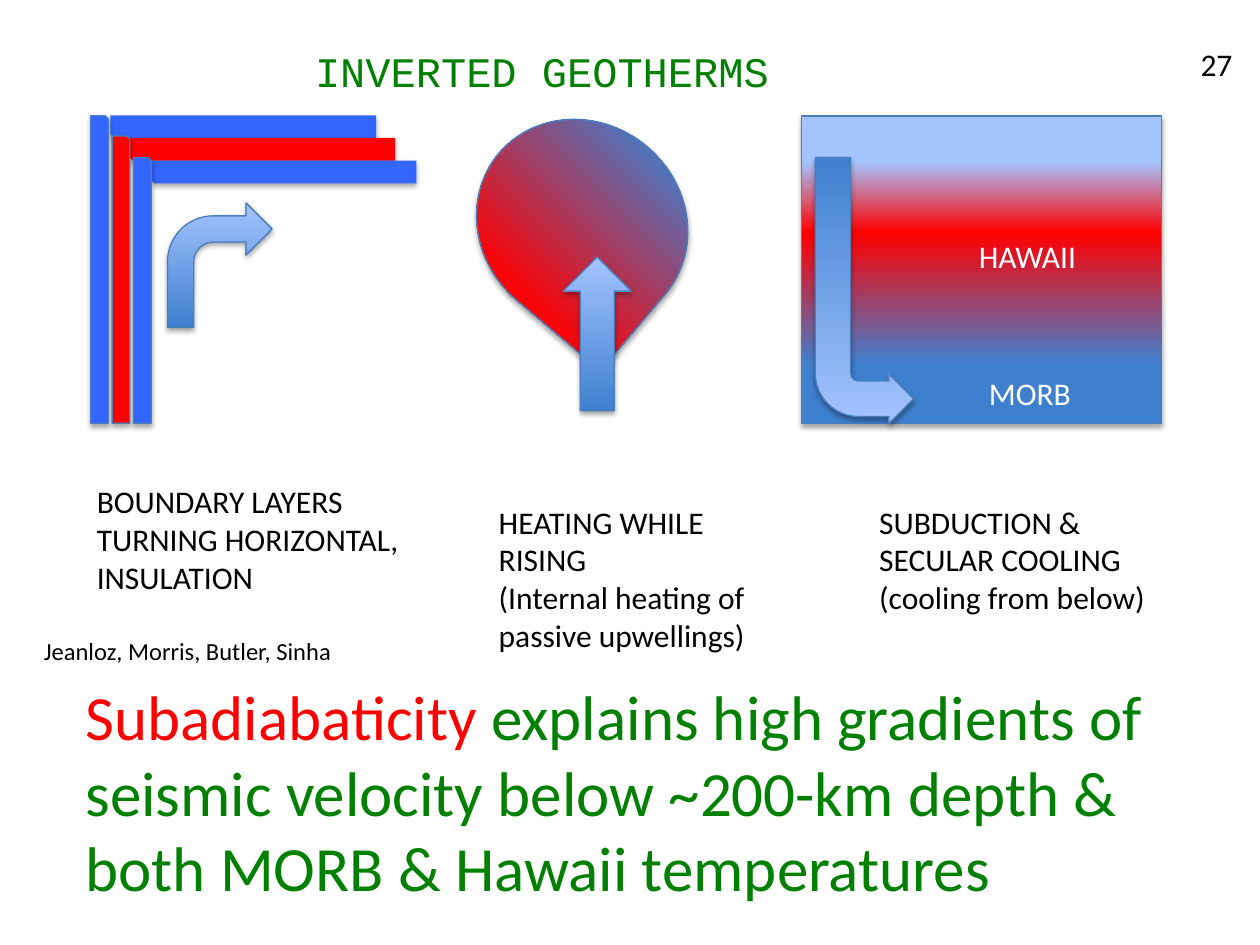
from pptx import Presentation
from pptx.dml.color import RGBColor
from pptx.enum.shapes import MSO_SHAPE
from pptx.enum.text import MSO_ANCHOR, MSO_AUTO_SIZE, PP_ALIGN
from pptx.oxml import parse_xml
from pptx.oxml.ns import nsdecls, qn
from pptx.util import Inches, Pt

SNIP, RECT, TEAR = MSO_SHAPE.SNIP_1_RECTANGLE, MSO_SHAPE.RECTANGLE, MSO_SHAPE.TEAR
BENT, UP = MSO_SHAPE.BENT_ARROW, MSO_SHAPE.UP_ARROW
TOP, LEFT, NO_FIT = MSO_ANCHOR.TOP, PP_ALIGN.LEFT, MSO_AUTO_SIZE.NONE

THEME = {
    "cold": "3366FF", "hot": "FF0000", "deep": "3F80CE", "pale": "A4C4FF",
    "outline": "4B7EBC", "green": "008000", "black": "000000", "white": "FFFFFF",
    "body_font": "Calibri", "title_font": "Courier New",
    "title": 24, "label": 18, "credit": 14, "message": 36,
}
UPWARD = '<a:lin ang="16200000" scaled="0"/>'
FROM_CORNER = '<a:path path="circle"><a:fillToRect t="100000" r="100000"/></a:path>'
ARROW_STOPS = [(0, "deep"), (100, "pale")]

deck = Presentation()
deck.slide_width, deck.slide_height = Inches(10), Inches(7.5)
page = deck.slides.add_slide(deck.slide_layouts[5])


def add_figure(kind, at, color=None, stops=(), direction=UPWARD, outlined=True, flip=None):
    """Add a shadowed shape with a solid fill or, if stops are given, a gradient."""
    shape = page.shapes.add_shape(kind, *map(Inches, at))
    properties = shape._element.spPr
    if flip:
        properties.get_or_add_xfrm().set(flip, "1")
    if stops:
        shape.fill.gradient()
        marks = "".join(
            f'<a:gs pos="{pos * 1000}"><a:srgbClr val="{THEME[name]}"/></a:gs>'
            for pos, name in stops)
        properties.replace(properties.find(qn("a:gradFill")), parse_xml(
            f'<a:gradFill {nsdecls("a")} rotWithShape="1">'
            f'<a:gsLst>{marks}</a:gsLst>{direction}</a:gradFill>'))
    else:
        shape.fill.solid()
        shape.fill.fore_color.rgb = RGBColor.from_string(THEME[color])
    if outlined:
        shape.line.color.rgb = RGBColor.from_string(THEME["outline"])
        shape.line.width = Pt(0.75)
    else:
        shape.line.fill.background()
    shape.shadow.inherit = False
    properties.find(qn("a:effectLst")).append(parse_xml(
        f'<a:outerShdw {nsdecls("a")} blurRad="{Pt(3.1)}" dist="{Pt(1.8)}" dir="5400000" '
        f'rotWithShape="0"><a:srgbClr val="{THEME["black"]}"><a:alpha val="35000"/>'
        '</a:srgbClr></a:outerShdw>'))
    return shape


def add_text(at, lines, size="label", color="black"):
    box = page.shapes.add_textbox(*map(Inches, at))
    frame = box.text_frame
    frame.word_wrap = True
    frame.text = "\n".join(lines)
    for para in frame.paragraphs:
        para.font.name = THEME["body_font"]
        para.font.size = Pt(THEME[size])
        para.font.color.rgb = RGBColor.from_string(THEME[color])
    return box


# Title
title = page.shapes.title
title.left, title.top, title.width, title.height = map(Inches, (2.4, 0.31, 4.64, 0.51))
title.text_frame.text = "INVERTED GEOTHERMS"
title.text_frame.vertical_anchor = TOP
title.text_frame.auto_size = NO_FIT
heading = title.text_frame.paragraphs[0]
heading.alignment = LEFT
heading.font.name = THEME["title_font"]
heading.font.size = Pt(THEME["title"])
heading.font.color.rgb = RGBColor.from_string(THEME["green"])

# Boundary layers: horizontal limbs, then the vertical limbs in front
layers = ["cold", "hot", "cold"]
for index, (color, left) in enumerate(zip(layers, (1.84, 1.99, 2.16))):
    limb = add_figure(SNIP, (left, -0.05 + 0.18 * index, 0.18, 2.11), color,
                      outlined=False, flip="flipH")
    limb.rotation = 270
for index, (color, top) in enumerate(zip(layers, (0.92, 1.08, 1.25))):
    add_figure(SNIP, (0.72 + 0.17 * index, top, 0.14, 3.36 - top), color)

# Rising plume and layered mantle
plume = add_figure(TEAR, (3.82, 0.91, 1.6, 1.73), stops=[(26, "hot"), (79, "deep")],
                   direction=FROM_CORNER)
plume.rotation = 130.1
add_figure(RECT, (6.36, 0.92, 2.86, 2.44),
           stops=[(19, "deep"), (62, "hot"), (85, "pale")])

# Flow arrows
add_figure(BENT, (1.33, 1.61, 0.83, 0.99), stops=ARROW_STOPS)
slab = add_figure(BENT, (6.47, 1.25, 0.78, 2.11), stops=ARROW_STOPS, flip="flipV")
for index, value in enumerate((0.36, 0.25, 0.25, 0.44)):
    slab.adjustments[index] = value
add_figure(UP, (4.47, 2.04, 0.54, 1.22), stops=ARROW_STOPS)

# Captions
add_text((0.67, 3.78, 2.64, 1.01), ["BOUNDARY LAYERS TURNING HORIZONTAL,", "INSULATION"])
add_text((3.86, 3.94, 2.5, 1.31),
         ["HEATING WHILE RISING", "(Internal heating of passive upwellings)"])
add_text((6.88, 3.94, 2.44, 1.01),
         ["SUBDUCTION &", "SECULAR COOLING", "(cooling from below)"])

# Message with a highlighted first word
message = add_text((0.58, 5.33, 9.02, 1.92), ["Subadiabaticity"], "message", "green")
para = message.text_frame.paragraphs[0]
para.runs[0].font.color.rgb = RGBColor.from_string(THEME["hot"])
span = para.add_run()
span.text = (" explains high gradients of seismic velocity below ~200-km depth"
             " & both MORB & Hawaii temperatures")
# Runs carry the colour, as the two parts differ
span.font.color.rgb = RGBColor.from_string(THEME["green"])

# Page number, credit and mantle labels
add_text((9.43, 0.31, 0.57, 0.4), ["27"])
add_text((0.25, 5, 3, 0.34), ["Jeanloz, Morris, Butler, Sinha"], "credit")
add_text((7.75, 2.92, 0.92, 0.4), ["MORB"], color="white")
add_text((7.67, 1.83, 1, 0.42), ["HAWAII"], color="white")

deck.save("out.pptx")
